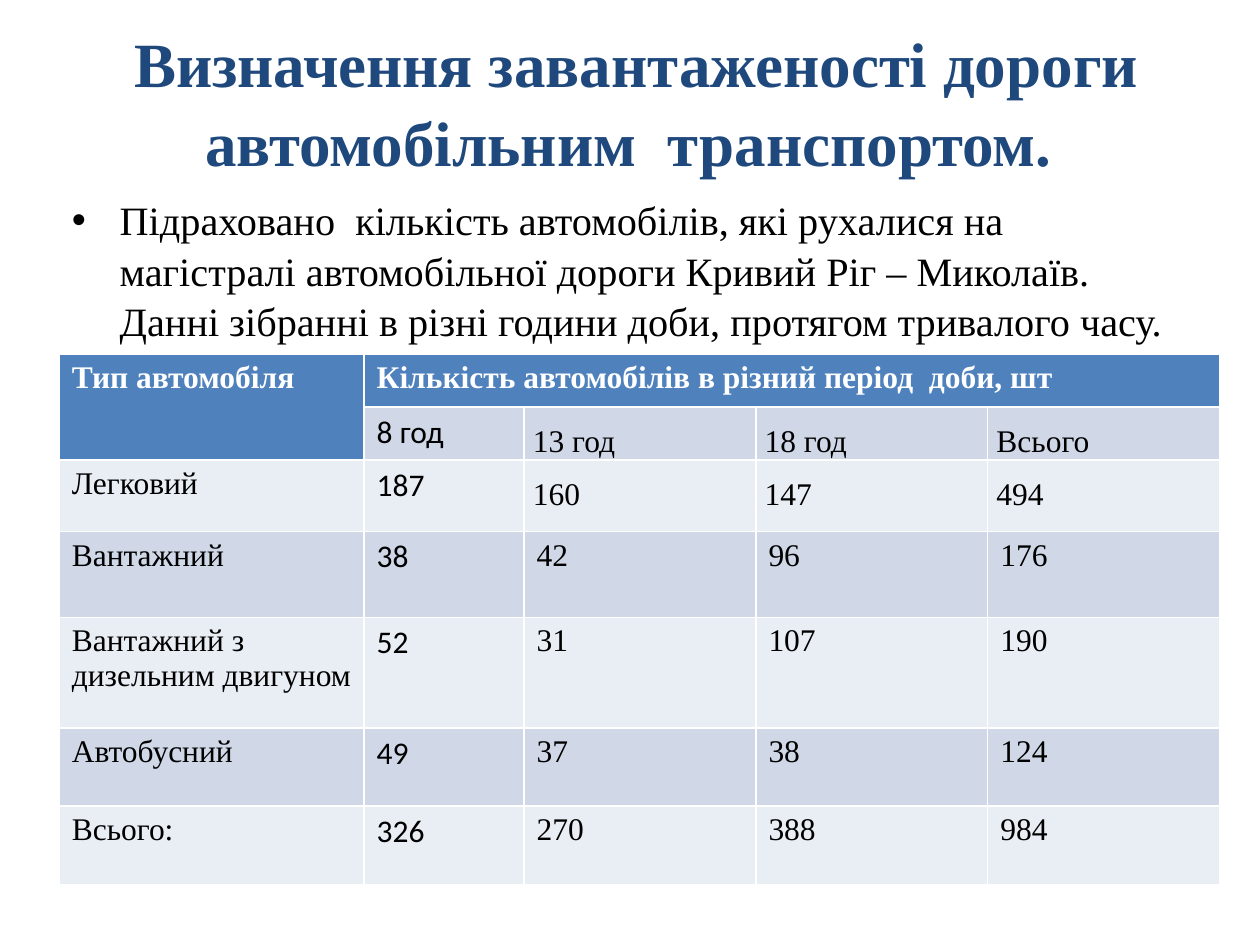
from pptx import Presentation
from pptx.dml.color import RGBColor
from pptx.enum.text import MSO_ANCHOR as Anchor, MSO_AUTO_SIZE as AutoSize, PP_ALIGN as Align
from pptx.util import Inches, Pt

SERIF, SANS = "Times New Roman", "Calibri"
HEADER_FILL, BAND_FILLS = "4F81BD", ("E9EDF4", "D0D8E8")
COLUMN_WIDTHS = (2.42, 1.27, 1.84, 1.84, 1.84)
ROW_HEIGHTS = (0.42, 0.42, 0.57, 0.68, 0.88, 0.62, 0.62)
TITLE = "Визначення завантаженості дороги автомобiльним  транспортом. "
SUMMARY = (
    "Підраховано  кількість автомобілів, які рухалися на магістралі "
    "автомобільної дороги Кривий Ріг – Миколаїв. Данні зібранні в різні "
    "години доби, протягом тривалого часу."
)
TRAFFIC = (
    ("Тип автомобіля", "Кількість автомобілів в різний період  доби, шт", "", "", ""),
    ("", "8 год", "13 год", "18 год", "Всього"),
    ("Легковий", "187", "160", "147", "494"),
    ("Вантажний", "38", "42", "96", "176"),
    ("Вантажний з дизельним двигуном", "52", "31", "107", "190"),
    ("Автобусний", "49", "37", "38", "124"),
    ("Всього:", "326", "270", "388", "984"),
)


def rgb(value):
    """Return the colour for a hex string."""
    return RGBColor.from_string(value)


def write(frame, text, size=18, font=SERIF, color="000000", bold=False, align=None, spacing=None):
    """Write one formatted paragraph into a text frame."""
    para = frame.paragraphs[0]
    para.alignment = align
    para.line_spacing = spacing
    span = para.add_run()
    span.text = text
    span.font.size = Pt(size)
    span.font.name = font
    span.font.bold = bold
    span.font.color.rgb = rgb(color)
    return para


def place(box, left, top, width, height):
    """Move and size a placeholder and return its text frame."""
    box.left, box.top = Inches(left), Inches(top)
    box.width, box.height = Inches(width), Inches(height)
    frame = box.text_frame
    frame.word_wrap = True
    frame.auto_size = AutoSize.NONE
    return frame


def add_title(page):
    """Fill the title placeholder."""
    frame = place(page.shapes.title, 0.55, 0.47, 9, 1.25)
    frame.vertical_anchor = Anchor.MIDDLE
    frame.margin_bottom = Inches(0.65)
    write(frame, TITLE, size=36, color="1F497D", bold=True, align=Align.CENTER, spacing=1.05)


def add_summary(page):
    """Fill the body placeholder with its bulleted paragraph."""
    frame = place(page.placeholders[1], 0.47, 1.48, 9, 4.95)
    para = write(frame, SUMMARY, size=23, spacing=1.05)
    properties = para._p.get_or_add_pPr()
    properties.set("marL", str(Inches(0.38)))
    properties.set("indent", str(-Inches(0.38)))


def fill_cell(cell, text, row, column):
    """Colour one table cell and write its text."""
    header = row == 0
    cell.fill.solid()
    cell.fill.fore_color.rgb = rgb(HEADER_FILL if header else BAND_FILLS[row % 2])
    if cell.is_spanned:
        return
    loose = row in (1, 2) and column > 1
    if loose:
        cell.margin_left = cell.margin_right = Inches(0.07)
        cell.margin_top = cell.margin_bottom = 0
    write(
        cell.text_frame,
        text,
        font=SANS if column == 1 and not header else SERIF,
        color="FFFFFF" if header else "000000",
        bold=header,
        spacing=1.5 if loose else None,
    )


def add_traffic_table(page):
    """Add the table of vehicle counts."""
    table = page.shapes.add_table(
        len(ROW_HEIGHTS), len(COLUMN_WIDTHS), Inches(0.47), Inches(2.81),
        Inches(sum(COLUMN_WIDTHS)), Inches(sum(ROW_HEIGHTS)),
    ).table
    for column, width in zip(table.columns, COLUMN_WIDTHS):
        column.width = Inches(width)
    for row, height in zip(table.rows, ROW_HEIGHTS):
        row.height = Inches(height)
    table.cell(0, 0).merge(table.cell(1, 0))
    table.cell(0, 1).merge(table.cell(0, 4))
    for row, texts in enumerate(TRAFFIC):
        for column, text in enumerate(texts):
            fill_cell(table.cell(row, column), text, row, column)


def main():
    """Build and save the slide."""
    deck = Presentation()
    deck.slide_width, deck.slide_height = Inches(10), Inches(7.5)
    page = deck.slides.add_slide(deck.slide_layouts[1])
    add_title(page)
    add_summary(page)
    add_traffic_table(page)
    deck.save("out.pptx")


if __name__ == "__main__":
    main()
